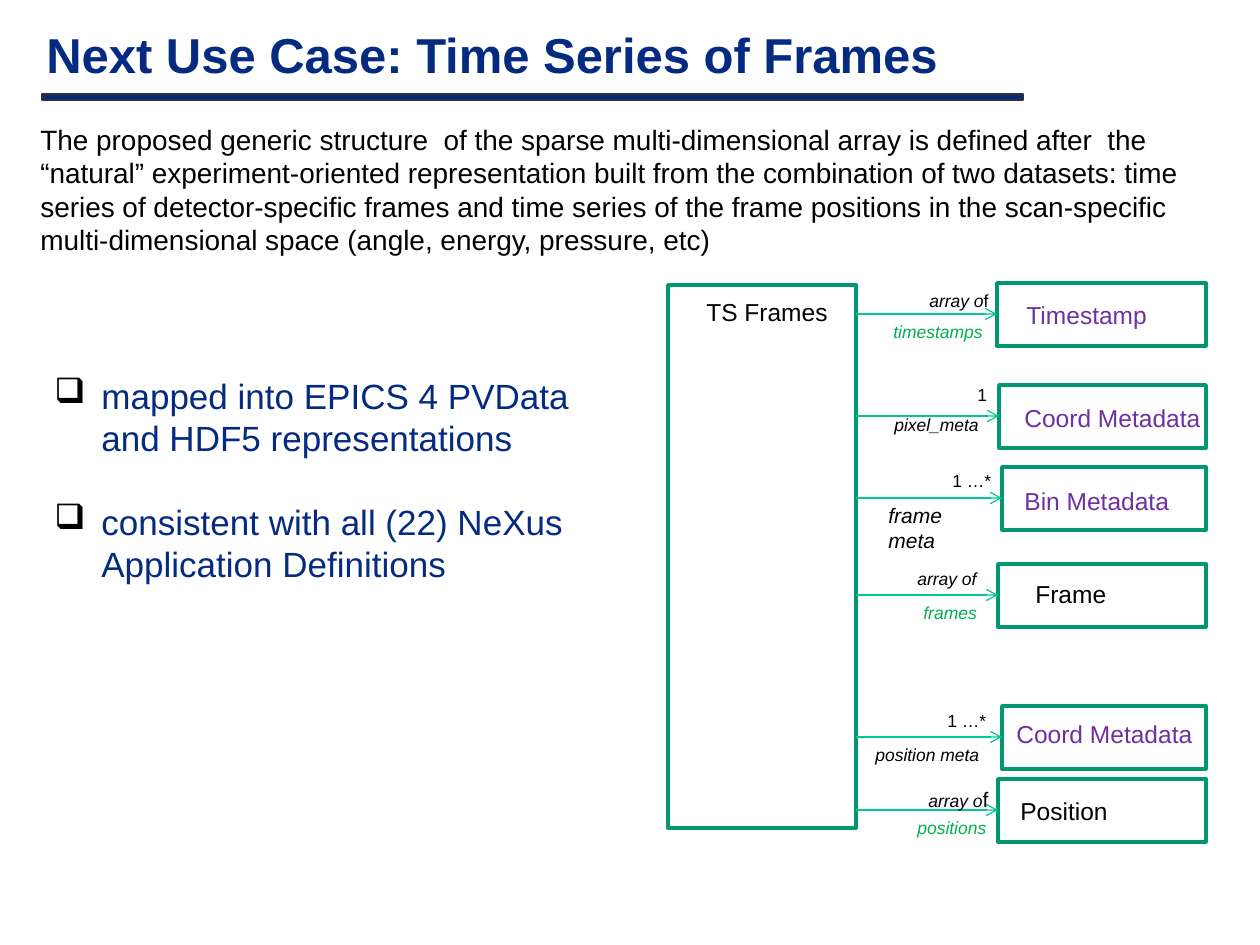
from lxml.etree import SubElement
from pptx import Presentation
from pptx.dml.color import RGBColor
from pptx.enum.shapes import MSO_CONNECTOR, MSO_SHAPE
from pptx.enum.text import MSO_ANCHOR, MSO_AUTO_SIZE
from pptx.oxml.ns import qn
from pptx.util import Emu, Pt

COLORS = {
    "navy": "042B7F", "charcoal": "322F31", "teal": "009771", "mint": "00C896",
    "purple": "7030A0", "green": "00B050", "black": "000000",
}
SCALE = 914400 / 126
BOX_RIGHT = 1206
BOX_HEIGHT = 63
SERIES = (668, 285, 188, 543)

INTRODUCTION = (
    "The proposed generic structure  of the sparse multi-dimensional array is defined after  the "
    "“natural” experiment-oriented representation built from the combination of two datasets: "
    "time series of detector-specific frames and time series of the frame positions in the "
    "scan-specific multi-dimensional space (angle, energy, pressure, etc)"
)
BULLETS = [
    "mapped into EPICS 4 PVData and HDF5 representations",
    "consistent with all (22) NeXus Application Definitions",
]
TARGETS = [
    ((997, 283), ("Timestamp", 1014, 294, 146, "purple")),
    ((999, 385), ("Coord Metadata", 1012, 397, 202, "purple")),
    ((1002, 467), ("Bin Metadata", 1012, 480, 171, "purple")),
    ((998, 564), ("Frame", 1023, 573, 100, "black")),
    ((1002, 706), ("Coord Metadata", 1004, 713, 202, "purple")),
    ((998, 779), ("Position", 1008, 790, 117, "black")),
]
CAPTIONS = [
    ("1", 965, 378, 35, "black", False),
    ("pixel_meta", 882, 408, 111, "black", True),
    ("1 …*", 940, 464, 64, "black", False),
    ("array of", 905, 562, 86, "black", True),
    ("frames", 911, 596, 79, "green", True),
    ("1 …*", 935, 704, 64, "black", False),
    ("position meta", 863, 738, 130, "black", True),
    ("timestamps", 881, 315, 116, "green", True),
    ("positions", 905, 811, 95, "green", True),
]
SPLIT_CAPTIONS = [(917, 284, 10), (916, 780, 12)]


def px(value):
    return Emu(round(value * SCALE))


def rgb(name):
    return RGBColor.from_string(COLORS[name])


class SlideBuilder:
    def __init__(self, slide, font="Arial"):
        self.slide = slide
        self.font = font

    def style(self, font, size, color, bold=False, italic=False):
        font.name = self.font
        font.size = Pt(size)
        font.bold = bold
        font.italic = italic
        font.color.rgb = rgb(color)

    def rectangle(self, left, top, width, height, line, weight, fill=None):
        shape = self.slide.shapes.add_shape(
            MSO_SHAPE.RECTANGLE, px(left), px(top), px(width), px(height))
        shape.shadow.inherit = False
        if fill:
            shape.fill.solid()
            shape.fill.fore_color.rgb = rgb(fill)
        else:
            shape.fill.background()
        shape.line.color.rgb = rgb(line)
        shape.line.width = Pt(weight)

    def text(self, text, left, top, width, height, size, color,
             bold=False, italic=False, wrap=False, grow=True):
        shape = self.slide.shapes.add_textbox(px(left), px(top), px(width), px(height))
        text_frame = shape.text_frame
        text_frame.text = text
        text_frame.word_wrap = wrap
        text_frame.auto_size = MSO_AUTO_SIZE.SHAPE_TO_FIT_TEXT if grow else MSO_AUTO_SIZE.NONE
        for paragraph in text_frame.paragraphs:
            for run in paragraph.runs:
                self.style(run.font, size, color, bold, italic)
        return text_frame

    def title(self, text, left, top, width, height):
        text_frame = self.text(text, left, top, width, height, 28, "navy",
                               bold=True, wrap=True, grow=False)
        text_frame.vertical_anchor = MSO_ANCHOR.MIDDLE
        text_frame.paragraphs[0].line_spacing = 0.8

    def bullets(self, items, left, top, width, height):
        text_frame = self.text("\n".join(items), left, top, width, height, 20, "navy", wrap=True)
        for index, paragraph in enumerate(text_frame.paragraphs):
            if index:
                paragraph.space_before = Pt(24)
            properties = paragraph._p.get_or_add_pPr()
            properties.set("marL", str(px(47)))
            properties.set("indent", str(-px(47)))
            bullet_color = SubElement(properties, qn("a:buClr"))
            SubElement(bullet_color, qn("a:srgbClr"), val=COLORS["black"])
            SubElement(properties, qn("a:buChar"), char="❑")

    def split_caption(self, left, top, tail_size):
        text_frame = self.text("array o", left, top, 86, 34, 10, "black", italic=True)
        run = text_frame.paragraphs[0].add_run()
        run.text = "f"
        self.style(run.font, tail_size, "black")

    def arrow(self, start, end, y):
        connector = self.slide.shapes.add_connector(
            MSO_CONNECTOR.STRAIGHT, px(start), px(y), px(end), px(y))
        connector.line.color.rgb = rgb("mint")
        connector.line.width = Pt(0.75)
        SubElement(connector.line._get_or_add_ln(), qn("a:tailEnd"), type="arrow")
        SubElement(connector._element.spPr, qn("a:effectLst"))


def main():
    presentation = Presentation()
    presentation.slide_width = px(1260)
    presentation.slide_height = px(945)
    slide = presentation.slides.add_slide(presentation.slide_layouts[6])
    builder = SlideBuilder(slide)

    builder.title("Next Use Case: Time Series of Frames", 34, 20, 1134, 78)
    builder.rectangle(42, 94, 981, 6, "charcoal", 0.75, "navy")
    builder.text(INTRODUCTION, 28, 116, 1194, 149, 16, "black", wrap=True)
    builder.bullets(BULLETS, 42, 368, 567, 267)

    builder.rectangle(*SERIES, "teal", 2)
    builder.text("TS Frames", 694, 291, 152, 43, 14, "black")
    series_right = SERIES[0] + SERIES[2]
    for (left, top), (name, name_left, name_top, name_width, color) in TARGETS:
        builder.rectangle(left, top, BOX_RIGHT - left, BOX_HEIGHT, "teal", 2)
        builder.text(name, name_left, name_top, name_width, 43, 14, color)
        builder.arrow(series_right, left, top + BOX_HEIGHT // 2)
    for caption, left, top, width, color, italic in CAPTIONS:
        builder.text(caption, left, top, width, 34, 10, color, italic=italic)
    builder.text("frame meta", 876, 496, 107, 33, 12, "black", italic=True, wrap=True)
    for caption in SPLIT_CAPTIONS:
        builder.split_caption(*caption)

    presentation.save("out.pptx")


if __name__ == "__main__":
    main()
